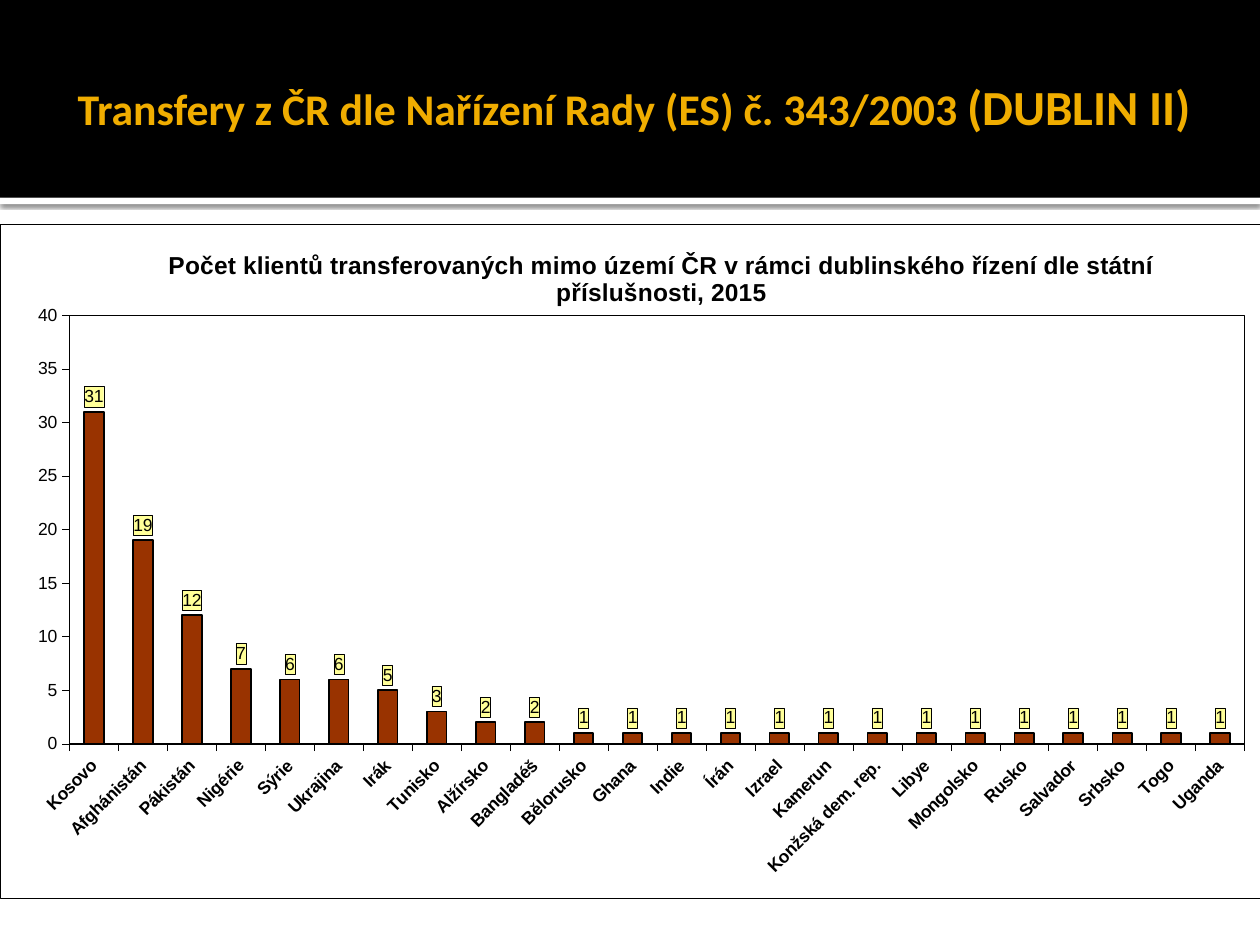
from dataclasses import dataclass

from lxml import etree
from pptx import Presentation
from pptx.chart.data import CategoryChartData
from pptx.dml.color import RGBColor
from pptx.enum.chart import XL_CHART_TYPE, XL_LABEL_POSITION, XL_TICK_MARK
from pptx.enum.shapes import MSO_SHAPE
from pptx.enum.text import MSO_ANCHOR, PP_ALIGN
from pptx.oxml import parse_xml
from pptx.oxml.ns import nsdecls, qn
from pptx.util import Inches, Pt

COLUMN = XL_CHART_TYPE.COLUMN_CLUSTERED
OUTSIDE_END = XL_LABEL_POSITION.OUTSIDE_END
TICK_OUT, TICK_NONE = XL_TICK_MARK.OUTSIDE, XL_TICK_MARK.NONE
RECTANGLE = MSO_SHAPE.RECTANGLE
MIDDLE, CENTER = MSO_ANCHOR.MIDDLE, PP_ALIGN.CENTER


@dataclass(frozen=True)
class Theme:
    black: str = "000000"
    white: str = "FFFFFF"
    gold: str = "F0AD00"
    bar: str = "993300"
    label: str = "FFFF99"
    title_font: str = "Calibri"
    chart_font: str = "Arial"
    title_size: int = 25
    emphasis_size: int = 28
    chart_title_size: int = 14
    chart_size: int = 10
    hairline: float = 0.25
    outline: float = 1


THEME = Theme()
CHART_TITLE = ("Počet klientů transferovaných mimo území ČR v rámci "
               "dublinského řízení dle státní příslušnosti, 2015")
TRANSFERS = {
    "Kosovo": 31, "Afghánistán": 19, "Pákistán": 12, "Nigérie": 7,
    "Sýrie": 6, "Ukrajina": 6, "Irák": 5, "Tunisko": 3, "Alžírsko": 2,
    "Bangladéš": 2,
} | dict.fromkeys([
    "Bělorusko", "Ghana", "Indie", "Írán", "Izrael", "Kamerun",
    "Konžská dem. rep.", "Libye", "Mongolsko", "Rusko", "Salvador",
    "Srbsko", "Togo", "Uganda"], 1)


def rgb(color):
    return RGBColor.from_string(color)


def style_font(font, name, size, color, bold=False):
    font.name, font.size, font.bold = name, Pt(size), bold
    font.color.rgb = rgb(color)


def style_line(line, width):
    line.color.rgb = rgb(THEME.black)
    line.width = Pt(width)


def add_band(slide, left, top, width, height, color):
    band = slide.shapes.add_shape(RECTANGLE, left, top, width, height)
    band.fill.solid()
    band.fill.fore_color.rgb = rgb(color)
    band.line.fill.background()
    band.shadow.inherit = False
    return band


def add_header(slide, left, top, width, height):
    # White rule with a soft shadow, below the black band
    rule = add_band(slide, left, top + height, width, Inches(0.05), THEME.white)
    effects = rule._element.spPr.find(qn("a:effectLst"))
    effects.append(parse_xml(
        f'<a:outerShdw {nsdecls("a")} blurRad="{Pt(2.5)}" dist="{Pt(0.8)}" '
        f'dir="5400000" algn="tl" rotWithShape="0"><a:srgbClr val="{THEME.black}">'
        '<a:alpha val="60000"/></a:srgbClr></a:outerShdw>'))
    add_band(slide, left, top, width, height, THEME.black)

    # Title, brought in front of the band
    title = slide.shapes.title
    slide.shapes._spTree.append(title._element)
    title.left, title.top = left + Inches(0.51), top + Inches(0.29)
    title.width, title.height = Inches(9), Inches(1.1)
    frame = title.text_frame
    frame.word_wrap = True
    frame.vertical_anchor = MIDDLE
    frame.margin_left = Inches(0.1)
    frame.margin_right = frame.margin_top = frame.margin_bottom = Inches(0.05)
    paragraph = frame.paragraphs[0]
    paragraph.alignment = CENTER
    style_font(paragraph.font, THEME.title_font, THEME.title_size, THEME.gold, True)
    for text, size in (
            ("Transfery z ČR dle Nařízení Rady (ES) č. 343/2003 ", THEME.title_size),
            ("(DUBLIN II)", THEME.emphasis_size)):
        run = paragraph.add_run()
        run.text = text
        run.font.size = Pt(size)


def box_format(width, fill=None):
    """Chart shape properties: black border and optional fill."""
    paint = (f'<a:solidFill><a:srgbClr val="{fill}"/></a:solidFill>'
             if fill else "<a:noFill/>")
    return parse_xml(
        f'<c:spPr {nsdecls("c", "a")}>{paint}<a:ln w="{Pt(width)}"><a:solidFill>'
        f'<a:srgbClr val="{THEME.black}"/></a:solidFill></a:ln></c:spPr>')


def manual_layout(x, y, size=None, inner=False):
    layout = etree.Element(qn("c:layout"))
    manual = etree.SubElement(layout, qn("c:manualLayout"))
    values = {"layoutTarget": "inner"} if inner else {}
    values |= {"xMode": "edge", "yMode": "edge", "x": x, "y": y}
    if size:
        values |= dict(zip("wh", size))
    for name, value in values.items():
        etree.SubElement(manual, qn(f"c:{name}")).set("val", str(value))
    return layout


def style_axis(axis, bold):
    axis.has_major_gridlines = False
    axis.major_tick_mark, axis.minor_tick_mark = TICK_OUT, TICK_NONE
    style_line(axis.format.line, THEME.hairline)
    style_font(axis.tick_labels.font, THEME.chart_font, THEME.chart_size,
               THEME.black, bold)


def add_transfer_chart(slide, left, top, width, height):
    data = CategoryChartData()
    data.categories = list(TRANSFERS)
    data.add_series("Series 1", list(TRANSFERS.values()))
    chart = slide.shapes.add_chart(COLUMN, left, top, width, height, data).chart
    style_font(chart.font, THEME.chart_font, THEME.chart_size, THEME.black)
    chart.has_legend = False

    # Chart title
    chart.has_title = True
    title = chart.chart_title
    title.include_in_layout = False
    title.text_frame.text = CHART_TITLE
    style_font(title.text_frame.paragraphs[0].font, THEME.chart_font,
               THEME.chart_title_size, THEME.black, True)
    for layout in title._element.findall(qn("c:layout")):
        title._element.remove(layout)
    title._element.find(qn("c:tx")).addnext(manual_layout(0.13, 0.03))

    # Axes
    style_axis(chart.category_axis, True)
    text_body = chart.category_axis._element.find(qn("c:txPr"))
    text_body.find(qn("a:bodyPr")).set("rot", "-2700000")
    style_axis(chart.value_axis, False)
    chart.value_axis.minimum_scale = 0
    chart.value_axis.maximum_scale = 40
    chart.value_axis.major_unit = 5

    # Columns and boxed value labels
    plot = chart.plots[0]
    plot.gap_width = 150
    plot.vary_by_categories = False
    series = plot.series[0]
    series.format.fill.solid()
    series.format.fill.fore_color.rgb = rgb(THEME.bar)
    style_line(series.format.line, THEME.outline)
    labels = series.data_labels
    labels.show_value = True
    labels.position = OUTSIDE_END
    style_font(labels.font, THEME.chart_font, THEME.chart_size, THEME.black)
    labels._element.find(qn("c:txPr")).addprevious(
        box_format(THEME.hairline, THEME.label))

    # Plot position and borders
    chart_element = chart._chartSpace.find(qn("c:chart"))
    plot_area = chart_element.find(qn("c:plotArea"))
    for layout in plot_area.findall(qn("c:layout")):
        plot_area.remove(layout)
    plot_area.insert(0, manual_layout(0.055, 0.135, (0.933, 0.636), inner=True))
    plot_area.append(box_format(THEME.outline))
    chart_element.addnext(box_format(THEME.hairline, THEME.white))


def main():
    presentation = Presentation()
    presentation.slide_width, presentation.slide_height = Inches(10), Inches(7.5)
    slide = presentation.slides.add_slide(presentation.slide_layouts[5])
    width = presentation.slide_width
    add_header(slide, 0, 0, width, Inches(1.57))
    add_transfer_chart(slide, 0, Inches(1.78), width, Inches(5.35))
    presentation.save("out.pptx")


if __name__ == "__main__":
    main()
